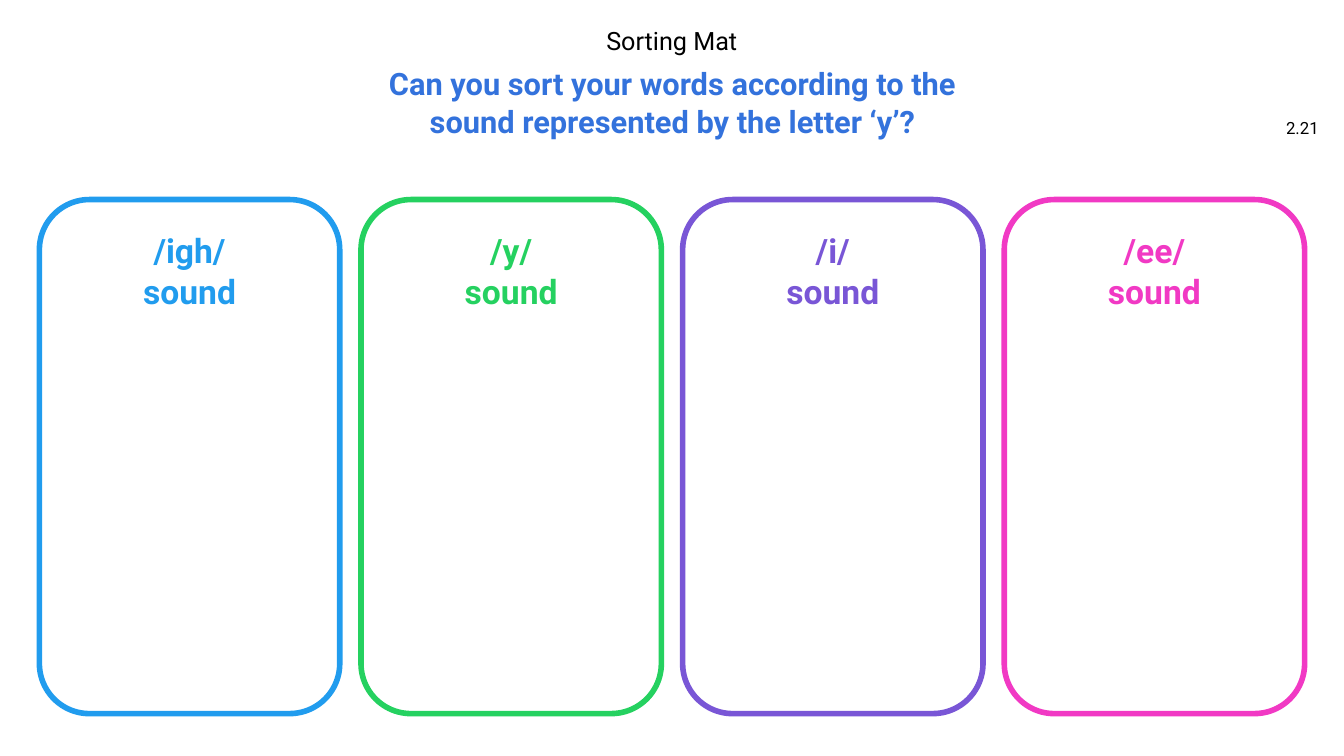
from collections import namedtuple

from pptx import Presentation
from pptx import util as u
from pptx.dml.color import RGBColor
from pptx.enum import shapes, text

COLORS = {
    "ink": "000000", "paper": "FFFFFF", "question": "3372DC",
    "igh": "219CEE", "y": "25D160", "i": "7956D6", "ee": "F139C4",
}
SOUNDS = ["igh", "y", "i", "ee"]
WIDTH, HEIGHT = u.Inches(13.33), u.Inches(7.5)
FONT = "Roboto"

Box = namedtuple("Box", "left top width height")


def share(box, left, top, width, height):
    """Return the part of a box given in percent of its size."""
    return Box(int(box.left + box.width * left / 100),
               int(box.top + box.height * top / 100),
               int(box.width * width / 100),
               int(box.height * height / 100))


def rgb(name):
    return RGBColor.from_string(COLORS[name])


def write(shape, lines, size, color, bold=False, align=text.PP_ALIGN.CENTER,
          anchor=text.MSO_ANCHOR.MIDDLE, spacing=1.0, wrap=True):
    frame = shape.text_frame
    frame.text = lines
    frame.word_wrap = wrap
    frame.auto_size = text.MSO_AUTO_SIZE.NONE
    frame.vertical_anchor = anchor
    for para in frame.paragraphs:
        para.alignment = align
        para.line_spacing = spacing
        para.space_before = u.Pt(0)
        for span in para.runs:
            span.font.name = FONT
            span.font.size = u.Pt(size)
            span.font.bold = bold
            span.font.color.rgb = rgb(color)


def move(shape, box):
    shape.left, shape.top, shape.width, shape.height = box


def heading(page, box):
    question = page.shapes.title
    move(question, share(box, 14.78, 8, 70.5, 10.93))
    write(question, "Can you sort your words according to the\n"
          "sound represented by the letter ‘y’?",
          22, "question", bold=True, spacing=u.Pt(27))

    activity = page.placeholders[1]
    move(activity, share(box, 28.65, 3.07, 42.68, 4.67))
    write(activity, "Sorting Mat", 18, "ink",
          anchor=text.MSO_ANCHOR.TOP, spacing=0.9)

    number = page.shapes.add_textbox(*share(box, 94.13, 14.27, 4.73, 5.33))
    write(number, "2.21", 12, "ink", align=text.PP_ALIGN.RIGHT)


def sound_card(page, box, sound):
    card = page.shapes.add_shape(shapes.MSO_SHAPE.ROUNDED_RECTANGLE, *box)
    card.shadow.inherit = False
    card.fill.solid()
    card.fill.fore_color.rgb = rgb("paper")
    card.line.color.rgb = rgb(sound)
    card.line.width = u.Pt(4)

    label = page.shapes.add_textbox(*share(box, 20, 5, 60, 10))
    write(label, f"/{sound}/\vsound", 24, sound, bold=True,
          anchor=text.MSO_ANCHOR.TOP, wrap=False)


def sorting_mat(page, box):
    heading(page, box)
    for column, sound in enumerate(SOUNDS):
        sound_card(page, share(box, 2.93 + 23.93 * column, 26.4, 22.35, 68), sound)


def main():
    deck = Presentation()
    deck.slide_width, deck.slide_height = WIDTH, HEIGHT
    page = deck.slides.add_slide(deck.slide_layouts[0])
    sorting_mat(page, Box(0, 0, WIDTH, HEIGHT))
    deck.save("out.pptx")


if __name__ == "__main__":
    main()
